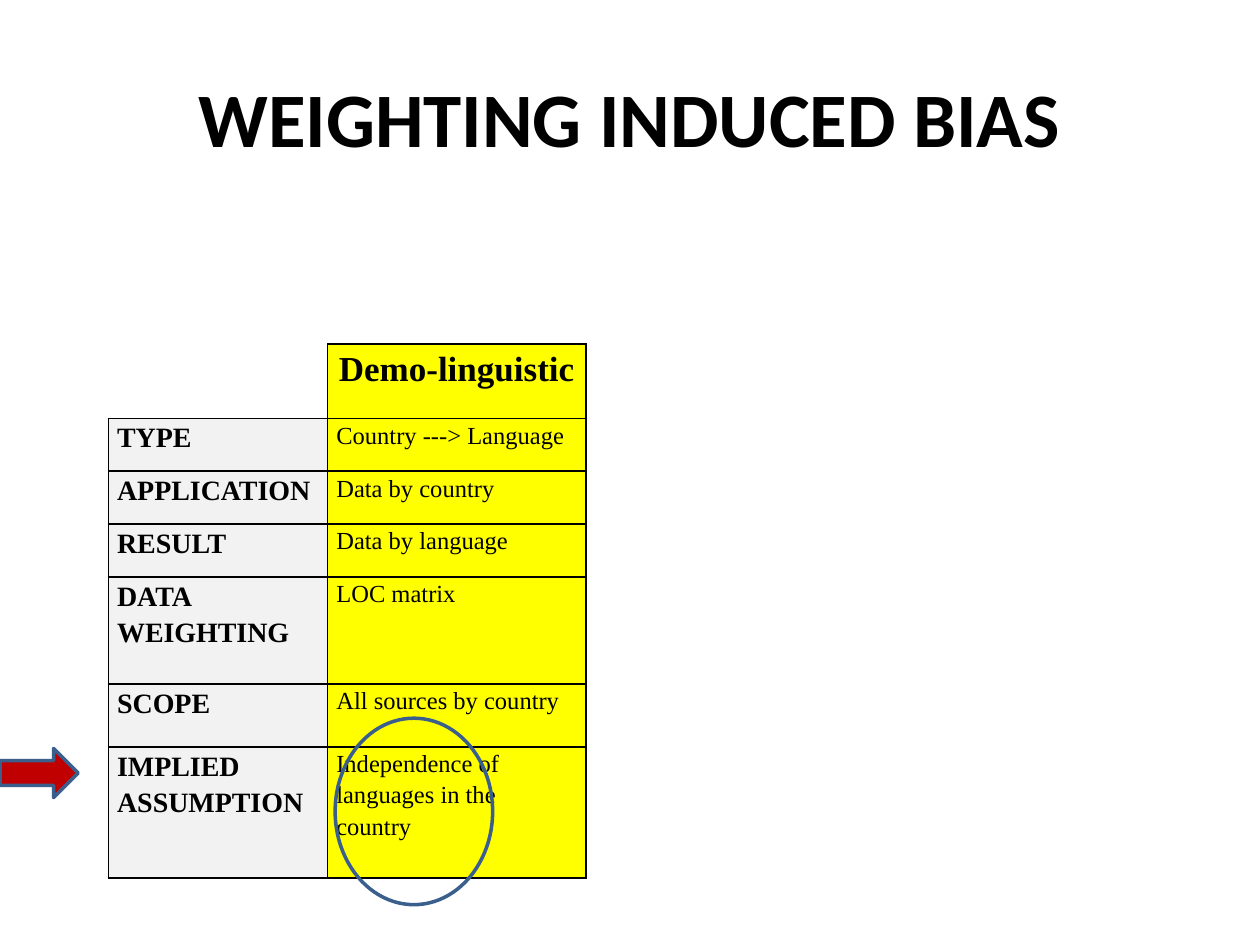
from dataclasses import dataclass
from lxml import etree
from pptx import Presentation, util as u
from pptx.dml.color import RGBColor
from pptx.enum import shapes, text
from pptx.oxml.ns import qn


@dataclass
class Theme:
    ink: str = "000000"
    label: str = "F2F2F2"
    accent: str = "FFFF00"
    arrow: str = "C00000"
    edge: str = "3A5F8C"
    head: str = "Calibri"
    body: str = "Times New Roman"
    title: int = 44
    top: int = 20
    side: int = 16
    cell: int = 14


def rgb(code):
    return RGBColor.from_string(code)


class Deck:
    def __init__(self, theme):
        self.theme = theme
        self.prs = Presentation()
        self.prs.slide_width, self.prs.slide_height = u.Inches(10), u.Inches(7.5)
        self.slide = self.prs.slides.add_slide(self.prs.slide_layouts[5])

    def run(self, para, words, font, size, bold):
        run = para.add_run()
        run.text = words
        run.font.name, run.font.size, run.font.bold = font, u.Pt(size), bold
        run.font.color.rgb = rgb(self.theme.ink)

    def title(self, words, box):
        shape = self.slide.shapes.title
        shape.left, shape.top, shape.width, shape.height = map(u.Inches, box)
        shape.text_frame.vertical_anchor = text.MSO_ANCHOR.MIDDLE
        para = shape.text_frame.paragraphs[0]
        para.alignment = text.PP_ALIGN.CENTER
        self.run(para, words, self.theme.head, self.theme.title, True)

    def border(self, cell, sides):
        """Draw a 1 pt line on each named side, given in the order L, R, T, B."""
        props = cell._tc.get_or_add_tcPr()
        for side in sides:
            line = etree.SubElement(props, qn(f"a:ln{side}"), w=str(u.Pt(1)))
            fill = etree.SubElement(line, qn("a:solidFill"))
            etree.SubElement(fill, qn("a:srgbClr"), val=self.theme.ink)

    def cell(self, cell, words, size, bold, fill, align):
        cell.margin_left = cell.margin_right = u.Inches(0.07)
        cell.margin_top = cell.margin_bottom = 0
        self.border(cell, "LRTB")
        cell.fill.solid()
        cell.fill.fore_color.rgb = rgb(fill)
        frame = cell.text_frame
        for i, part in enumerate(words.split("\n")):
            para = frame.add_paragraph() if i else frame.paragraphs[0]
            para.alignment, para.line_spacing = align, 1.15
            self.run(para, part, self.theme.body, size, bold)

    def table(self, left, top, cols, rows, head, items):
        """Build a label and value table whose top left corner stays open."""
        look, align = self.theme, text.PP_ALIGN
        box = map(u.Inches, (left, top, sum(cols), sum(rows)))
        grid = self.slide.shapes.add_table(len(rows), len(cols), *box).table
        grid.first_row = grid.horz_banding = False
        for col, width in zip(grid.columns, cols):
            col.width = u.Inches(width)
        for row, height in zip(grid.rows, rows):
            row.height = u.Inches(height)
        self.border(grid.cell(0, 0), "RB")
        grid.cell(0, 0).fill.background()
        self.cell(grid.cell(0, 1), head, look.top, True, look.accent, align.CENTER)
        for i, (label, value) in enumerate(items, 1):
            self.cell(grid.cell(i, 0), label, look.side, True, look.label, align.JUSTIFY)
            side = align.JUSTIFY if i == 1 else align.LEFT
            self.cell(grid.cell(i, 1), value, look.cell, False, look.accent, side)

    def shape(self, kind, box, fill=None):
        shape = self.slide.shapes.add_shape(kind, *map(u.Inches, box))
        shape.shadow.inherit = False
        if fill:
            shape.fill.solid()
            shape.fill.fore_color.rgb = rgb(fill)
        else:
            shape.fill.background()
        shape.line.color.rgb = rgb(self.theme.edge)
        shape.line.width = u.Pt(2)


def main():
    deck = Deck(Theme())
    deck.title("WEIGHTING INDUCED BIAS", (0.5, 0.3, 9, 1.25))
    items = [
        ("TYPE", "Country ---> Language"),
        ("APPLICATION", "Data by country"),
        ("RESULT", "Data by language"),
        ("DATA\nWEIGHTING", "LOC matrix"),
        ("SCOPE", "All sources by country"),
        ("IMPLIED ASSUMPTION", "Independence of languages in the country"),
    ]
    rows = [0.59, 0.42, 0.42, 0.42, 0.85, 0.5, 1.04]
    deck.table(0.86, 2.73, [1.74, 2.05], rows, "Demo-linguistic", items)
    kind = shapes.MSO_SHAPE
    deck.shape(kind.RIGHT_ARROW, (0, 5.94, 0.62, 0.39), deck.theme.arrow)
    deck.shape(kind.OVAL, (2.66, 5.7, 1.25, 1.48))
    deck.prs.save("out.pptx")


if __name__ == "__main__":
    main()
